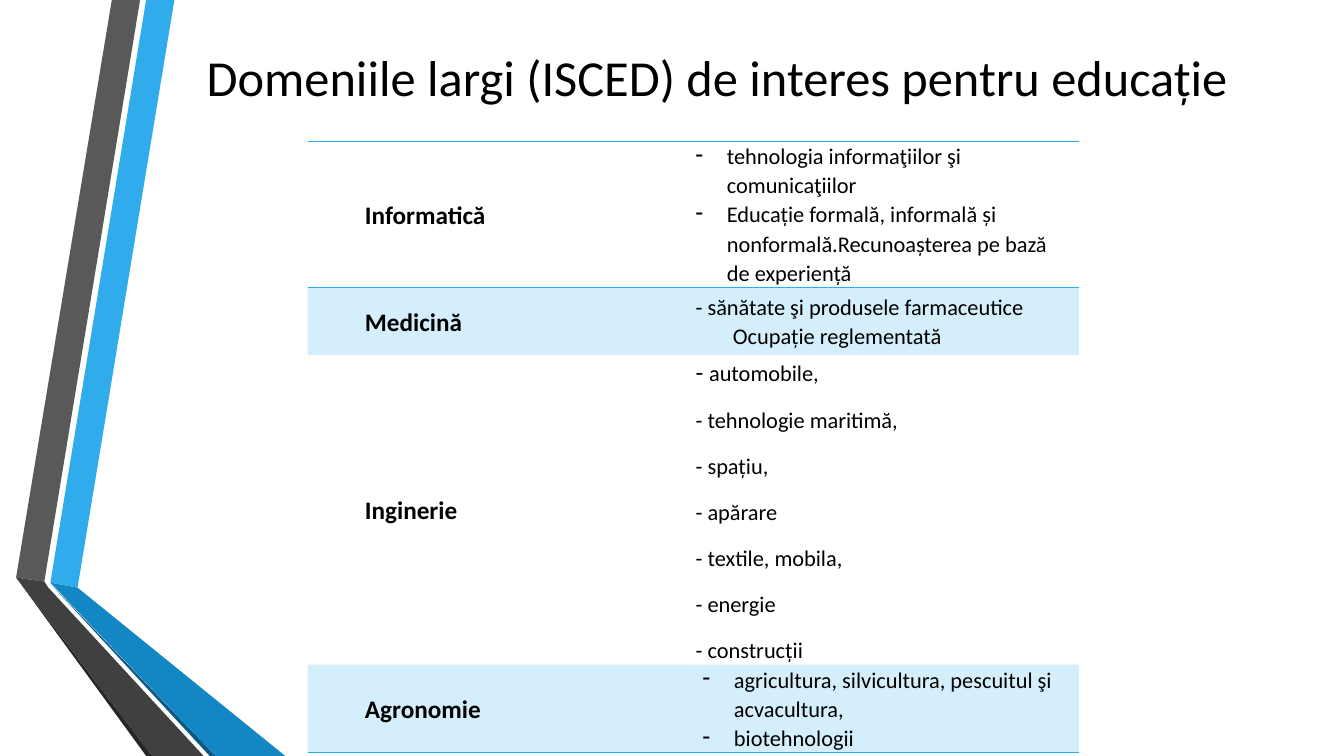
from dataclasses import dataclass

import lxml.etree
import pptx
import pptx.dml.color
import pptx.enum.text
import pptx.oxml.ns
import pptx.util

Inches = pptx.util.Inches
Pt = pptx.util.Pt

COLORS = {
    "blue": "30ACEC",
    "blue_fold": "1287C3",
    "blue_edge": "0C5A82",
    "gray": "595959",
    "gray_fold": "404040",
    "gray_edge": "262626",
    "text": "000000",
}
FONT = "Calibri"
NO_STYLE_NO_GRID = "{2D5ABB26-0587-4C30-8999-92F81FD0307C}"


@dataclass
class Ribbon:
    color: str
    points: list[tuple[float, float]]


@dataclass
class Line:
    text: str
    indent: float = 0
    bulleted: bool = False
    spacing: float = 0
    lead: str = ""


@dataclass
class Domain:
    name: str
    height: float
    lines: list[Line]
    shaded: bool = False
    borders: tuple[str, ...] = ()


RIBBONS = [
    Ribbon("blue", [(0.5, 5.78), (0.77, 5.83), (1.73, 0), (1.45, 0)]),
    Ribbon("gray", [(1.39, 0), (1.11, 0), (0.16, 5.73), (0.44, 5.77)]),
    Ribbon("gray_edge", [(0.16, 5.73), (1.45, 7.5), (1.51, 7.5)]),
    Ribbon("blue_edge", [(0.5, 5.79), (2.08, 7.5), (2.14, 7.5)]),
    Ribbon("blue_fold", [(0.5, 5.78), (2.14, 7.5), (2.83, 7.5), (0.77, 5.83)]),
    Ribbon("gray_fold", [(0.16, 5.73), (1.51, 7.5), (2.02, 7.5), (0.48, 5.83), (0.44, 5.77)]),
]

ENGINEERING = ["- tehnologie maritimă,", "- spațiu,", "- apărare",
               "- textile, mobila,", "- energie", "- construcții"]

DOMAINS = [
    Domain("Informatică", 1.35, [
        Line("tehnologia informaţiilor şi comunicaţiilor", 0.31, True),
        Line("Educație formală, informală și nonformală.Recunoașterea pe bază de experiență",
             0.31, True),
    ], borders=("lnT", "lnB")),
    Domain("Medicină", 0.67, [
        Line("- sănătate şi produsele farmaceutice"),
        Line("Ocupație reglementată", 0.37),
    ], shaded=True),
    Domain("Inginerie", 2.72, [
        Line("automobile,", spacing=6, lead="- "),
        *(Line(text, spacing=6) for text in ENGINEERING),
    ]),
    Domain("Agronomie", 0.56, [
        Line("agricultura, silvicultura, pescuitul şi acvacultura,", 0.38, True),
        Line("biotehnologii", 0.38, True),
    ], shaded=True, borders=("lnB",)),
]


def rgb(name: str) -> pptx.dml.color.RGBColor:
    return pptx.dml.color.RGBColor.from_string(COLORS[name])


def add_element(parent, tag: str, **attributes: str):
    element = lxml.etree.SubElement(parent, pptx.oxml.ns.qn(tag))
    for key, value in attributes.items():
        element.set(key, value)
    return element


def add_run(paragraph, text: str, size: float, bold: bool = False) -> None:
    run = paragraph.add_run()
    run.text = text
    run.font.name = FONT
    run.font.size = Pt(size)
    run.font.bold = bold
    run.font.color.rgb = rgb("text")


def add_ribbon(slide, ribbon: Ribbon) -> None:
    start, *rest = [(Inches(x), Inches(y)) for x, y in ribbon.points]
    builder = slide.shapes.build_freeform(*start)
    builder.add_line_segments(rest, close=True)
    shape = builder.convert_to_shape()
    shape.shadow.inherit = False
    shape.fill.solid()
    shape.fill.fore_color.rgb = rgb(ribbon.color)
    shape.line.fill.background()


def format_cell(cell, domain: Domain) -> None:
    """Set margins, anchor, translucent fill and horizontal borders."""
    cell.margin_left = cell.margin_right = Inches(0.07)
    cell.margin_top = cell.margin_bottom = 0
    cell.vertical_anchor = pptx.enum.text.MSO_ANCHOR.MIDDLE
    properties = cell._tc.get_or_add_tcPr()
    for side in domain.borders:
        border = add_element(properties, f"a:{side}", w=str(Pt(1)))
        add_element(add_element(border, "a:solidFill"), "a:srgbClr", val=COLORS["blue"])
    if domain.shaded:
        color = add_element(add_element(properties, "a:solidFill"), "a:srgbClr",
                            val=COLORS["blue"])
        add_element(color, "a:alpha", val="20000")
    else:
        add_element(properties, "a:noFill")


def write_line(paragraph, line: Line, size: float = 16, bold: bool = False) -> None:
    paragraph.line_spacing = 1.07
    paragraph.space_before = paragraph.space_after = Pt(line.spacing)
    properties = paragraph._p.get_or_add_pPr()
    properties.set("marL", str(Inches(line.indent)))
    properties.set("indent", str(Inches(-0.31 if line.bulleted else 0)))
    if line.bulleted:
        add_element(properties, "a:buFontTx")
        add_element(properties, "a:buChar", char="-")
    if line.lead:
        add_run(paragraph, line.lead, 18)
    add_run(paragraph, line.text, size, bold)


def add_domain_table(slide) -> None:
    height = sum(domain.height for domain in DOMAINS)
    frame = slide.shapes.add_table(len(DOMAINS), 2, Inches(3.05), Inches(1.4),
                                   Inches(7.65), Inches(height))
    table = frame.table
    table.first_row = table.horz_banding = False
    table._tbl.tblPr.find(pptx.oxml.ns.qn("a:tableStyleId")).text = NO_STYLE_NO_GRID
    for column, width in zip(table.columns, (3.78, 3.87)):
        column.width = Inches(width)
    for index, domain in enumerate(DOMAINS):
        table.rows[index].height = Inches(domain.height)
        name_cell, detail_cell = table.cell(index, 0), table.cell(index, 1)
        format_cell(name_cell, domain)
        format_cell(detail_cell, domain)
        write_line(name_cell.text_frame.paragraphs[0], Line(domain.name, 0.5), 18, True)
        frame_text = detail_cell.text_frame
        for number, line in enumerate(domain.lines):
            paragraph = frame_text.add_paragraph() if number else frame_text.paragraphs[0]
            write_line(paragraph, line)


def write_title(slide) -> None:
    title = slide.shapes.title
    title.left, title.top = Inches(1.47), Inches(0.25)
    title.width, title.height = Inches(11.29), Inches(1.02)
    title.text_frame.auto_size = pptx.enum.text.MSO_AUTO_SIZE.NONE
    title.text_frame.vertical_anchor = pptx.enum.text.MSO_ANCHOR.MIDDLE
    paragraph = title.text_frame.paragraphs[0]
    paragraph.alignment = pptx.enum.text.PP_ALIGN.CENTER
    add_run(paragraph, "Domeniile largi (ISCED) de interes pentru educație", 36)


def main() -> None:
    presentation = pptx.Presentation()
    presentation.slide_width = Inches(13.33)
    presentation.slide_height = Inches(7.5)
    slide = presentation.slides.add_slide(presentation.slide_layouts[5])
    for ribbon in RIBBONS:
        add_ribbon(slide, ribbon)
    write_title(slide)
    add_domain_table(slide)
    presentation.save("out.pptx")


if __name__ == "__main__":
    main()
